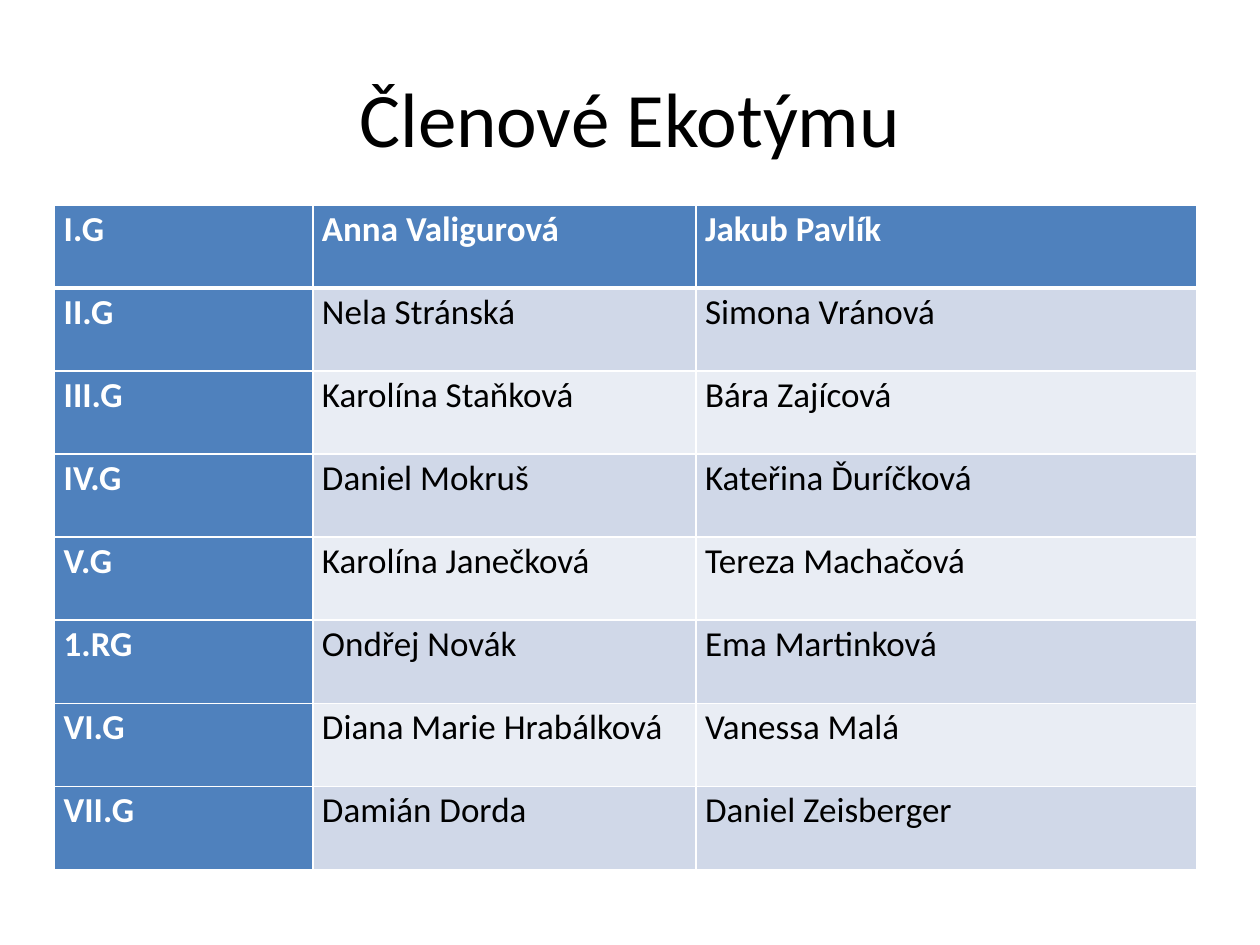
import dataclasses

import lxml.etree
import pptx
import pptx.dml.color
import pptx.enum.text
import pptx.oxml.ns
import pptx.util

Pt = pptx.util.Pt
ALIGN = pptx.enum.text.PP_ALIGN
ANCHOR = pptx.enum.text.MSO_ANCHOR


@dataclasses.dataclass(frozen=True)
class Theme:
    font: str = "Calibri"
    title_size: float = 44
    cell_size: float = 20
    ink: str = "000000"
    white: str = "FFFFFF"
    heading_fill: str = "4F81BD"
    band_fills: tuple = ("E9EDF4", "D0D8E8")


THEME = Theme()

MEMBERS = [
    ("I.G", "Anna Valigurová", "Jakub Pavlík"),
    ("II.G", "Nela Stránská", "Simona Vránová"),
    ("III.G", "Karolína Staňková", "Bára Zajícová"),
    ("IV.G", "Daniel Mokruš", "Kateřina Ďuríčková"),
    ("V.G", "Karolína Janečková", "Tereza Machačová"),
    ("1.RG", "Ondřej Novák", "Ema Martinková"),
    ("VI.G", "Diana Marie Hrabálková", "Vanessa Malá"),
    ("VII.G", "Damián Dorda", "Daniel Zeisberger"),
]


def rgb(value):
    return pptx.dml.color.RGBColor.from_string(value)


def write(frame, text, *, size, color=THEME.ink, bold=False, align=ALIGN.LEFT, spacing=1.0):
    frame.word_wrap = True
    paragraph = frame.paragraphs[0]
    paragraph.alignment = align
    paragraph.line_spacing = spacing
    run = paragraph.add_run()
    run.text = text
    run.font.name = THEME.font
    run.font.size = Pt(size)
    run.font.bold = bold
    run.font.color.rgb = rgb(color)


def set_borders(cell, color, **widths):
    """Add cell borders, given in the order L, R, T, B, ahead of the fill."""
    properties = cell._tc.get_or_add_tcPr()
    qn = pptx.oxml.ns.qn
    for position, (side, width) in enumerate(widths.items()):
        line = lxml.etree.Element(qn(f"a:ln{side}"), w=str(Pt(width)))
        fill = lxml.etree.SubElement(line, qn("a:solidFill"))
        lxml.etree.SubElement(fill, qn("a:srgbClr"), val=color)
        properties.insert(position, line)


def add_title(slide, text, left, top, width, height):
    title = slide.shapes.add_textbox(Pt(left), Pt(top), Pt(width), Pt(height))
    title.text_frame.vertical_anchor = ANCHOR.MIDDLE
    write(title.text_frame, text, size=THEME.title_size, align=ALIGN.CENTER)


def add_members(slide, members, left, top, column_widths, row_height):
    frame = slide.shapes.add_table(
        len(members), len(column_widths), Pt(left), Pt(top),
        Pt(sum(column_widths)), Pt(row_height * len(members)))
    table = frame.table
    for column, width in zip(table.columns, column_widths):
        column.width = Pt(width)

    for row_index, member in enumerate(members):
        table.rows[row_index].height = Pt(row_height)
        for column_index, text in enumerate(member):
            cell = table.cell(row_index, column_index)
            heading = row_index == 0 or column_index == 0
            cell.margin_left = cell.margin_right = Pt(5.2)
            cell.margin_top = cell.margin_bottom = Pt(0)
            cell.vertical_anchor = ANCHOR.TOP
            cell.fill.solid()
            cell.fill.fore_color.rgb = rgb(
                THEME.heading_fill if heading else THEME.band_fills[row_index % 2])
            write(cell.text_frame, text, size=THEME.cell_size, bold=heading,
                  color=THEME.white if heading else THEME.ink, spacing=1.07)
            # A thick rule parts the first row from the rest
            set_borders(cell, THEME.white, L=1, R=1,
                        T=3 if row_index == 1 else 1,
                        B=3 if row_index == 0 else 1)


def main():
    presentation = pptx.Presentation()
    presentation.slide_width, presentation.slide_height = Pt(720), Pt(540)
    slide = presentation.slides.add_slide(presentation.slide_layouts[6])

    # Title
    add_title(slide, "Členové Ekotýmu", 36, 21.6, 648, 90)
    # Class members
    add_members(slide, MEMBERS, 31.2, 117, (147.6, 218.9, 286.2), 47.5)

    presentation.save("out.pptx")


if __name__ == "__main__":
    main()
